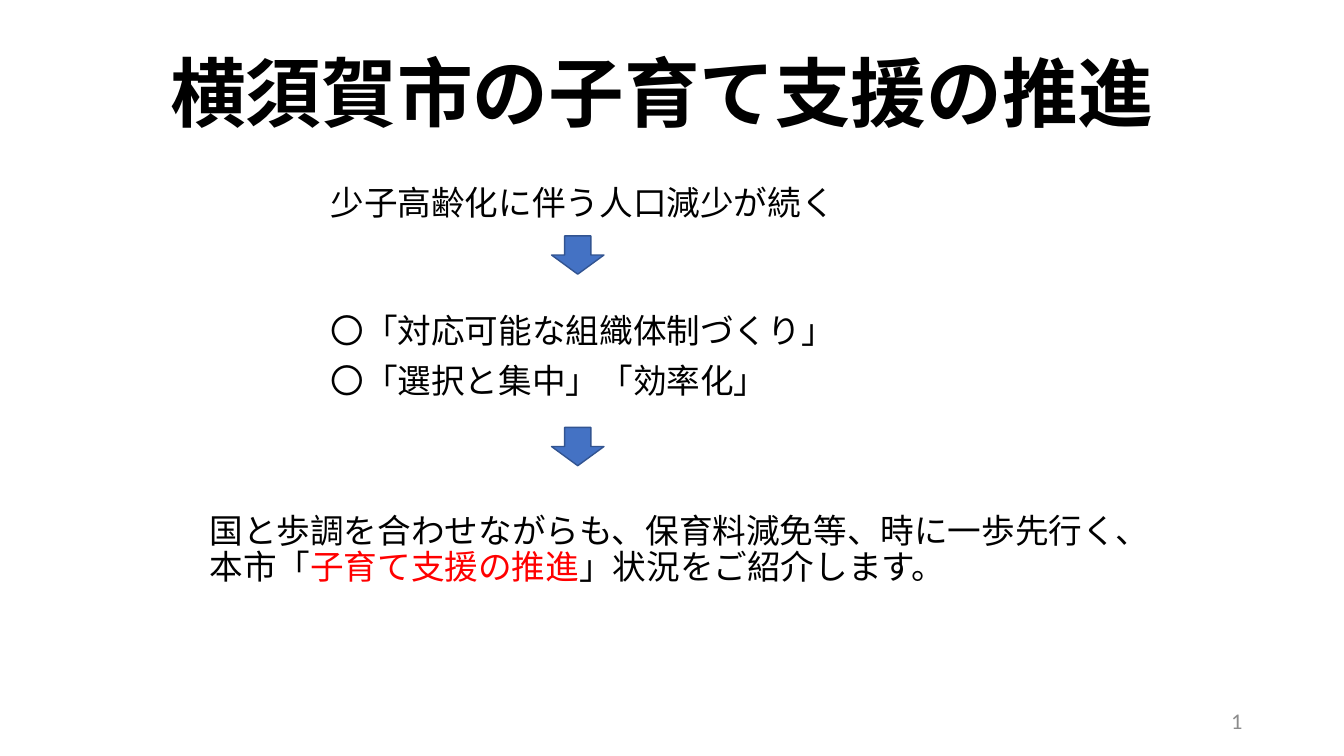
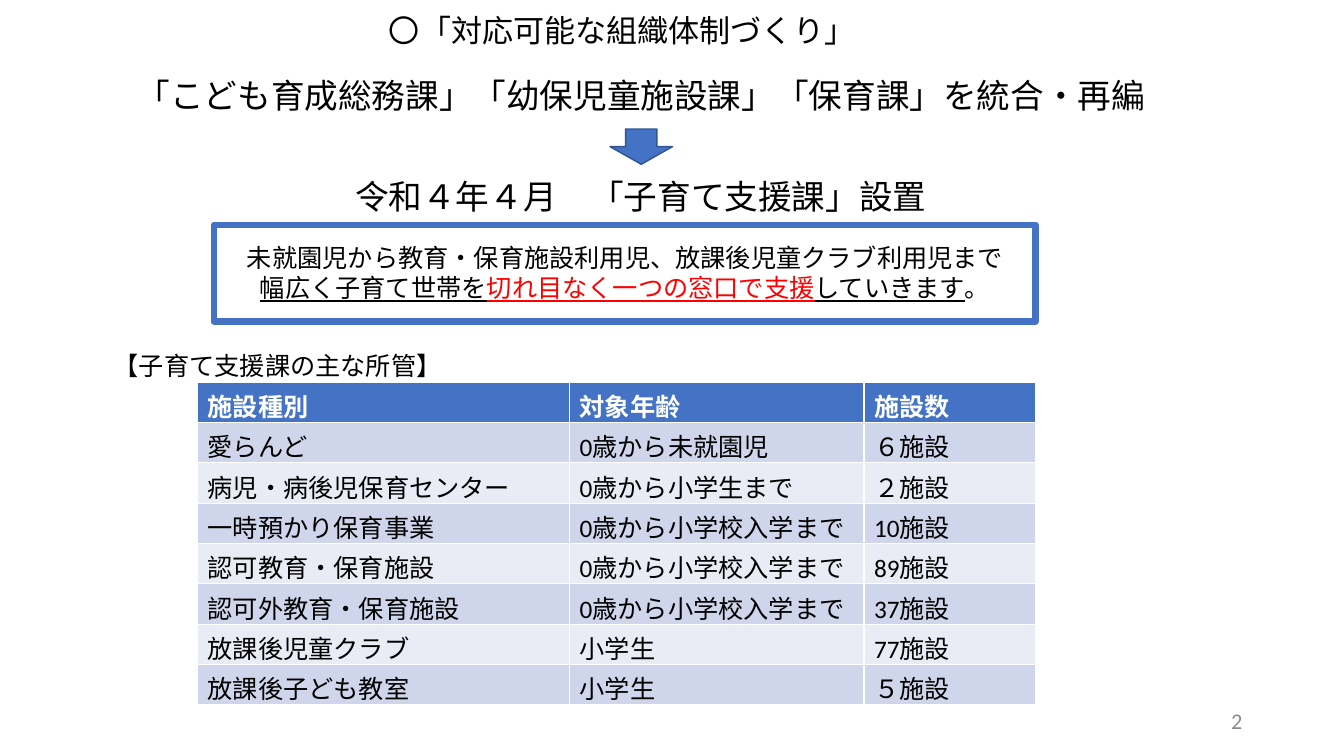
from pptx import Presentation
from pptx.dml.color import RGBColor
from pptx.enum.shapes import MSO_SHAPE as SHAPE
from pptx.enum.text import MSO_ANCHOR as ANCHOR, PP_ALIGN as ALIGN
from pptx.util import Emu, Pt

SCALE = 9144
FONT = "Calibri"
BLACK = RGBColor(0x00, 0x00, 0x00)
WHITE = RGBColor(0xFF, 0xFF, 0xFF)
RED = RGBColor(0xFF, 0x00, 0x00)
GRAY = RGBColor(0x8C, 0x8C, 0x8C)
BLUE = RGBColor(0x44, 0x72, 0xC4)
DARK_BLUE = RGBColor(0x32, 0x54, 0x91)
BAND_DARK = RGBColor(0xCF, 0xD5, 0xEA)
BAND_LIGHT = RGBColor(0xE9, 0xEB, 0xF5)

FACILITIES = [
    ("施設種別", "対象年齢", "施設数"),
    ("愛らんど", "0歳から未就園児", "６施設"),
    ("病児・病後児保育センター", "0歳から小学生まで", "２施設"),
    ("一時預かり保育事業", "0歳から小学校入学まで", "10施設"),
    ("認可教育・保育施設", "0歳から小学校入学まで", "89施設"),
    ("認可外教育・保育施設", "0歳から小学校入学まで", "37施設"),
    ("放課後児童クラブ", "小学生", "77施設"),
    ("放課後子ども教室", "小学生", "５施設"),
]


def px(*lengths):
    """Turn px lengths into a list of EMU lengths."""
    return [Emu(n * SCALE) for n in lengths]


def style_run(r, size, color=BLACK, bold=False, underline=None):
    """Set the font of one run."""
    f = r.font
    f.name, f.size, f.bold, f.underline = FONT, Pt(size), bold, underline
    f.color.rgb = color


def add_text(slide, box, paragraphs, size, align=ALIGN.LEFT, color=BLACK,
             bold=False, anchor=ANCHOR.TOP, line=None, before=0):
    """Add a text box; a paragraph is a string or a list of (text, colour, underline)."""
    tf = slide.shapes.add_textbox(*px(*box)).text_frame
    tf.word_wrap = True
    tf.vertical_anchor = anchor
    for i, parts in enumerate(paragraphs):
        p = tf.add_paragraph() if i else tf.paragraphs[0]
        p.alignment, p.line_spacing, p.space_before = align, line, Pt(before)
        if isinstance(parts, str):
            parts = [(parts, color, None)]
        for text, run_color, underline in parts:
            r = p.add_run()
            r.text = text
            style_run(r, size, run_color, bold, underline)
    return tf


def add_body(slide, box, paragraphs, size=24, align=ALIGN.LEFT):
    """Add body text with the shared line and paragraph spacing."""
    return add_text(slide, box, paragraphs, size, align, line=0.9, before=10)


def add_panel(slide, kind, box, fill, line, width):
    """Add a filled and outlined preset shape."""
    s = slide.shapes.add_shape(kind, *px(*box))
    s.shadow.inherit = False
    s.fill.solid()
    s.fill.fore_color.rgb = fill
    s.line.color.rgb = line
    s.line.width = Pt(width)


def add_arrow(slide, box):
    """Add a blue down arrow."""
    add_panel(slide, SHAPE.DOWN_ARROW, box, BLUE, DARK_BLUE, 1)


def add_support_box(slide, box):
    """Add the framed statement on seamless support."""
    x, y, w, h = box
    add_panel(slide, SHAPE.RECTANGLE, box, WHITE, BLUE, 4.5)
    add_text(slide, (x - 42, y + 12, w + 85, h - 25), [
        "未就園児から教育・保育施設利用児、放課後児童クラブ利用児まで",
        [("幅広く子育て世帯を", BLACK, True),
         ("切れ目なく一つの窓口で支援", RED, True),
         ("していきます", BLACK, True),
         ("。", BLACK, False)],
    ], 18, ALIGN.CENTER)


def add_facility_table(slide, box, widths):
    """Add the banded table of facilities."""
    table = slide.shapes.add_table(len(FACILITIES), len(widths), *px(*box)).table
    for col, width in zip(table.columns, px(*widths)):
        col.width = width
    for i, row in enumerate(FACILITIES):
        fill = BLUE if i == 0 else BAND_DARK if i % 2 else BAND_LIGHT
        for j, text in enumerate(row):
            cell = table.cell(i, j)
            cell.text = text
            cell.fill.solid()
            cell.fill.fore_color.rgb = fill
            style_run(cell.text_frame.paragraphs[0].runs[0], 18,
                      BLACK if i else WHITE, bold=i == 0)


def new_slide(prs):
    """Add a blank slide with its page number."""
    slide = prs.slides.add_slide(prs.slide_layouts[6])
    add_text(slide, (942, 695, 300, 40), [str(len(prs.slides))], 16,
             ALIGN.RIGHT, GRAY, anchor=ANCHOR.MIDDLE)
    return slide


def build_intro(prs):
    """Build the opening slide on the city's childcare support."""
    slide = new_slide(prs)
    add_text(slide, (148, 34, 1017, 108), ["横須賀市の子育て支援の推進"], 54,
             ALIGN.CENTER, bold=True, anchor=ANCHOR.BOTTOM, line=0.9)
    add_body(slide, (318, 180, 611, 54), ["少子高齢化に伴う人口減少が続く"])
    add_body(slide, (318, 307, 805, 108),
             ["〇「対応可能な組織体制づくり」", "〇「選択と集中」「効率化」"])
    for y in (234, 424):
        add_arrow(slide, (547, y, 52, 38))
    add_body(slide, (198, 505, 937, 108), [[
        ("国と歩調を合わせながらも、保育料減免等、時に一歩先行く、本市「", BLACK, None),
        ("子育て支援の推進", RED, None),
        ("」状況をご紹介します。", BLACK, None),
    ]])


def build_organization(prs):
    """Build the slide on the new section and its facilities."""
    slide = new_slide(prs)
    add_body(slide, (376, 11, 520, 59), ["〇「対応可能な組織体制づくり」"], 22.2)
    tf = add_body(slide, (56, 74, 1159, 151), [
        "「こども育成総務課」「幼保児童施設課」「保育課」を統合・再編",
        "令和４年４月　「子育て支援課」設置",
    ], align=ALIGN.CENTER)
    tf.paragraphs[1].space_before = Pt(46)
    add_arrow(slide, (605, 128, 62, 35))
    add_support_box(slide, (212, 223, 815, 96))
    add_text(slide, (103, 343, 402, 40), ["【子育て支援課の主な所管】"], 18)
    add_facility_table(slide, (196, 379, 831, 320), (369, 292, 170))


def main():
    """Build and save the presentation."""
    prs = Presentation()
    prs.slide_width, prs.slide_height = px(1333, 750)
    build_intro(prs)
    build_organization(prs)
    prs.save("out.pptx")


if __name__ == "__main__":
    main()
